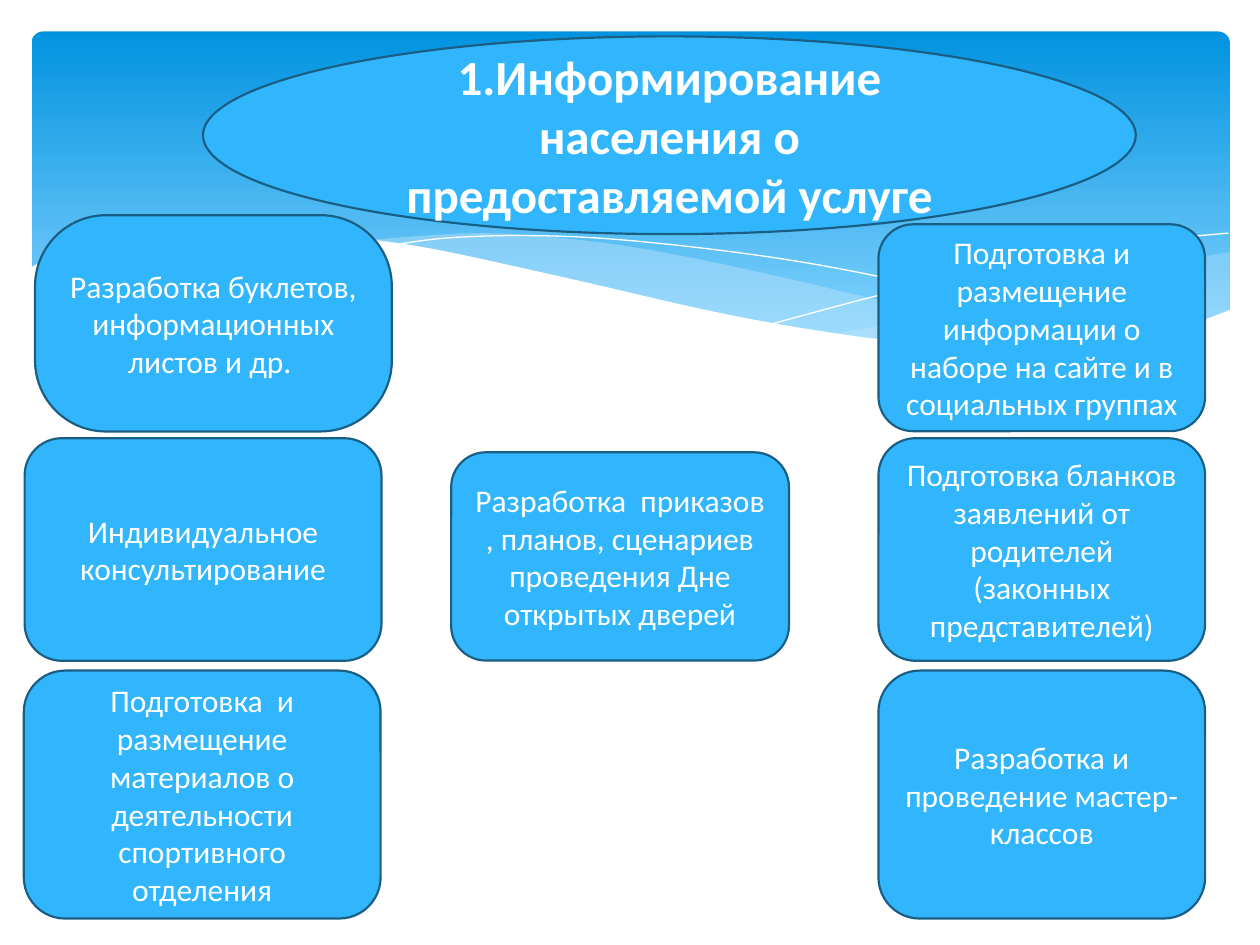
from dataclasses import dataclass
from itertools import pairwise
from lxml.etree import SubElement
from pptx import Presentation
from pptx.dml.color import RGBColor as RGB
from pptx.enum.shapes import MSO_SHAPE as Kind
from pptx.enum.text import MSO_ANCHOR as Anchor, PP_ALIGN as Align
from pptx.oxml.ns import qn
from pptx.util import Pt


# Theme: colours and type sizes
@dataclass(frozen=True)
class Theme:
    font: str = "Calibri"
    head: float = 28
    body: float = 18
    white: str = "FFFFFF"
    fill: str = "31B6FD"
    edge: str = "195F84"
    top: str = "0293E0"
    low: str = "83D3FE"
    mist: str = "C6E7FC"
    stroke: float = 1.25


@dataclass(frozen=True)
class Card:
    text: str
    x: float
    y: float
    w: float
    h: float
    round: float = 0.16667


@dataclass(frozen=True)
class Wave:
    upper: list
    lower: list
    alpha: int = 100
    color: str = Theme.mist


T = Theme()

# Waves of the banner, as points on smooth edges
WAVES = [
    Wave([(702.7, 144), (663.1, 151.2), (619.9, 160.6), (542.2, 178.6), (475.9, 190.8)],
         [(475.9, 190.8), (517.7, 195.8), (553.7, 199.4), (593.3, 199.4),
          (634.3, 196.6), (668.2, 189.4), (702.7, 177.8)], 29),
    Wave([(643, 196.6), (581, 187.2), (508.3, 172.8), (452.9, 159.8), (389.5, 146.2),
          (334.8, 137.5), (273.6, 133.2), (205.9, 137.5)],
         [(205.9, 137.5), (260.6, 146.2), (323.3, 159.8), (407.5, 178.6), (468, 190.1),
          (519.8, 197.3), (573.1, 200.2), (610.6, 199.4), (643, 196.6)], 40),
]
THREADS = [
    [(222.5, 140.4), (254.2, 136.1), (299.5, 134.6), (352, 136.8), (419, 144),
     (478.8, 153.4), (547.2, 167.8), (598.3, 180.7), (653, 195.8)],
    [(441.4, 185), (500.4, 169.2), (558.7, 155.5), (623.5, 143.3),
     (665.3, 136.8), (702, 133.2)],
]
GROUND = Wave(
    [(703.4, 177), (662.4, 190.8), (612, 198), (560.2, 198.7), (495.4, 193),
     (416.9, 180), (321.8, 158.4), (244.8, 141.8), (195.1, 135.4), (139, 132.5),
     (95, 133.9), (54.7, 140.4), (28.8, 147.6), (16.6, 153.4)],
    [(16.6, 236.9), (703.4, 236.9)], color=T.white)

# Card columns and rows
LEFT, RIGHT = 14.1, 502
WIDE, SLIM = 203.9, 186.7
MID, MID_H = 250.4, 127.2
LOW, LOW_H = 383.2, 141.7

TITLE = Card("1.Информирование населения о предоставляемой услуге", 116, 20.8, 533, 113)
CARDS = [
    Card("Разработка буклетов, информационных листов и др. ", 20, 123, WIDE, 123.6, 0.328),
    Card("Разработка  приказов , планов, сценариев проведения Дне открытых дверей",
         257.8, 258.5, 193, 119),
    Card("Подготовка и размещение информации о наборе на сайте и в социальных группах",
         RIGHT, 128.2, SLIM, 118.2),
    Card("Индивидуальное консультирование", LEFT, MID, WIDE, MID_H),
    Card("Подготовка бланков заявлений от родителей (законных представителей)",
         RIGHT, MID, SLIM, MID_H),
    Card("Подготовка  и размещение материалов о деятельности спортивного отделения",
         LEFT - 0.5, LOW, WIDE, LOW_H),
    Card("Разработка и проведение мастер-классов", RIGHT, LOW, SLIM, LOW_H),
]


def smooth(dots: list, steps: int = 6) -> list:
    """Catmull-Rom curve through the dots."""
    pad = [dots[0], *dots, dots[-1]]
    out = [dots[0]]
    for i, (b, c) in enumerate(pairwise(dots)):
        a, d = pad[i], pad[i + 3]
        for t in (n / steps for n in range(1, steps + 1)):
            out.append(tuple(
                (2 * q + (r - p) * t + (2 * p - 5 * q + 4 * r - s) * t * t
                 + (3 * q - p - 3 * r + s) * t ** 3) / 2
                for p, q, r, s in zip(a, b, c, d)))
    return out


def trace(shapes, dots: list, close: bool):
    (x, y), *rest = [(Pt(x), Pt(y)) for x, y in dots]
    pen = shapes.build_freeform(x, y)
    pen.add_line_segments(rest, close=close)
    shape = pen.convert_to_shape()
    shape.shadow.inherit = False
    return shape


def add_wave(shapes, wave: Wave) -> None:
    low = smooth(wave.lower) if len(wave.lower) > 2 else wave.lower
    shape = trace(shapes, smooth(wave.upper) + low, True)
    shape.line.fill.background()
    shape.fill.solid()
    shape.fill.fore_color.rgb = RGB.from_string(wave.color)
    if wave.alpha < 100:
        tone = shape.fill._xPr.find(qn("a:solidFill"))[0]
        SubElement(tone, qn("a:alpha"), val=str(wave.alpha * 1000))


def add_thread(shapes, dots: list) -> None:
    shape = trace(shapes, smooth(dots), False)
    shape.fill.background()
    shape.line.color.rgb = RGB.from_string(T.white)
    shape.line.width = Pt(0)


def add_box(shapes, kind: Kind, x: float, y: float, w: float, h: float):
    shape = shapes.add_shape(kind, Pt(x), Pt(y), Pt(w), Pt(h))
    shape.shadow.inherit = False
    return shape


def add_banner(shapes) -> None:
    box = add_box(shapes, Kind.ROUNDED_RECTANGLE, 18, 18, 684.7, 194.4)
    box.adjustments[0] = 0.034
    box.line.fill.background()
    box.fill.gradient()
    box.fill.gradient_angle = 270
    for stop, color, spot in zip(box.fill.gradient_stops, (T.top, T.low), (0, 0.9)):
        stop.color.rgb = RGB.from_string(color)
        stop.position = spot


def put_text(shape, text: str, *, size: float = T.body, bold: bool = False,
             color: str = T.white) -> None:
    frame = shape.text_frame
    frame.word_wrap = True
    frame.vertical_anchor = Anchor.MIDDLE
    para = frame.paragraphs[0]
    para.alignment = Align.CENTER
    run = para.add_run()
    run.text = text
    font = run.font
    font.name, font.size, font.bold = T.font, Pt(size), bold
    font.color.rgb = RGB.from_string(color)


def add_card(shapes, card: Card, kind: Kind = Kind.ROUNDED_RECTANGLE, **form) -> None:
    box = add_box(shapes, kind, card.x, card.y, card.w, card.h)
    if kind == Kind.ROUNDED_RECTANGLE:
        box.adjustments[0] = card.round
    box.fill.solid()
    box.fill.fore_color.rgb = RGB.from_string(T.fill)
    box.line.color.rgb = RGB.from_string(T.edge)
    box.line.width = Pt(T.stroke)
    put_text(box, card.text, **form)


def main() -> None:
    deck = Presentation()
    deck.slide_width, deck.slide_height = Pt(720), Pt(540)
    shapes = deck.slides.add_slide(deck.slide_layouts[6]).shapes

    # Backdrop
    add_banner(shapes)
    for wave in WAVES:
        add_wave(shapes, wave)
    for dots in THREADS:
        add_thread(shapes, dots)
    add_wave(shapes, GROUND)

    # Title and cards
    add_card(shapes, TITLE, Kind.OVAL, size=T.head, bold=True)
    for card in CARDS:
        add_card(shapes, card)

    deck.save("out.pptx")


if __name__ == "__main__":
    main()
